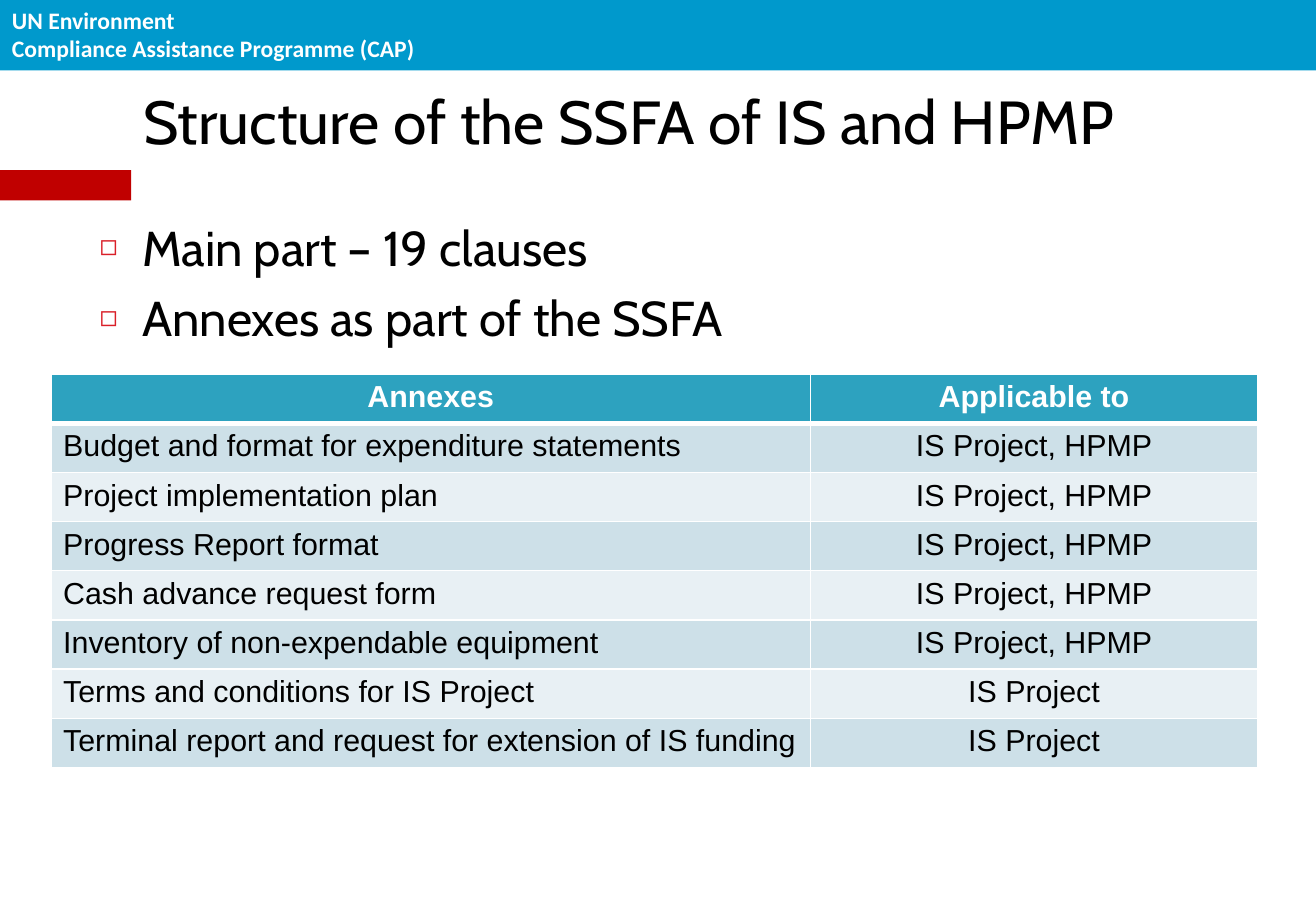
from lxml import etree
from pptx import Presentation
from pptx import util as u
from pptx.dml.color import RGBColor
from pptx.enum import shapes, text
from pptx.oxml import ns

WHITE = RGBColor(0xFF, 0xFF, 0xFF)
BLACK = RGBColor(0x00, 0x00, 0x00)
BLUE = RGBColor(0x00, 0x99, 0xCC)
RED = RGBColor(0xC0, 0x00, 0x00)
BULLET_RED = RGBColor(0xDA, 0x1F, 0x28)
TEAL = RGBColor(0x2D, 0xA2, 0xBF)
BANDS = [RGBColor(0xE8, 0xF0, 0xF4), RGBColor(0xCD, 0xE0, 0xE8)]

BOTH = "IS Project, HPMP"
ROWS = [
    ("Annexes", "Applicable to"),
    ("Budget and format for expenditure statements", BOTH),
    ("Project implementation plan", BOTH),
    ("Progress Report format", BOTH),
    ("Cash advance request form", BOTH),
    ("Inventory of non-expendable equipment", BOTH),
    ("Terms and conditions for IS Project", "IS Project"),
    ("Terminal report and request for extension of IS funding", "IS Project"),
]


def style(para, font, size, color, bold=False):
    for span in para.runs:
        span.font.name = font
        span.font.size = u.Pt(size)
        span.font.color.rgb = color
        span.font.bold = bold


def add_element(parent, tag, **attributes):
    return etree.SubElement(parent, ns.qn(tag), **attributes)


deck = Presentation()
deck.slide_width, deck.slide_height = u.Inches(10.83), u.Inches(7.5)
page = deck.slides.add_slide(deck.slide_layouts[1])

# Header band and red accent
for top, width, height, color in [(1.4, 1.08, 0.25, RED), (0, 10.83, 0.58, BLUE)]:
    bar = page.shapes.add_shape(shapes.MSO_SHAPE.RECTANGLE, 0, u.Inches(top),
                                u.Inches(width), u.Inches(height))
    bar.shadow.inherit = False
    bar.fill.solid()
    bar.fill.fore_color.rgb = color
    bar.line.fill.background()

header = page.shapes.add_textbox(0, 0, u.Inches(3.68), u.Inches(0.57))
header.text_frame.word_wrap = False
header.text_frame.text = "UN Environment\nCompliance Assistance Programme (CAP)"
for para in header.text_frame.paragraphs:
    style(para, "Calibri", 14, WHITE, True)

# Title
title = page.shapes.title
title.left, title.top = u.Inches(1.08), u.Inches(0.58)
title.width, title.height = u.Inches(9.58), u.Inches(0.82)
title.text_frame.text = "Structure of the SSFA of IS and HPMP"
title.text_frame.auto_size = text.MSO_AUTO_SIZE.NONE
title.text_frame.vertical_anchor = text.MSO_ANCHOR.MIDDLE
title.text_frame.paragraphs[0].alignment = text.PP_ALIGN.LEFT
style(title.text_frame.paragraphs[0], "Cabin", 36, BLACK)

# Bullet list
body = page.placeholders[1]
body.left, body.top = u.Inches(0.72), u.Inches(1.74)
body.width, body.height = u.Inches(9.69), u.Inches(1.34)
body.text_frame.text = "Main part – 19 clauses\nAnnexes as part of the SSFA"
body.text_frame.auto_size = text.MSO_AUTO_SIZE.NONE
for index, para in enumerate(body.text_frame.paragraphs):
    properties = para._p.get_or_add_pPr()
    properties.set("marL", str(u.Inches(0.35)))
    properties.set("indent", str(-u.Inches(0.35)))
    add_element(add_element(properties, "a:buClr"), "a:srgbClr", val=str(BULLET_RED))
    add_element(properties, "a:buSzPct", val="60000")
    add_element(properties, "a:buChar", char="◻")
    para.space_before = u.Pt(7 if index else 0)
    style(para, "Cabin", 29, BLACK)

# Table of annexes
frame = page.shapes.add_table(len(ROWS), 2, u.Inches(0.42), u.Inches(3.08),
                              u.Inches(9.93), u.Inches(3.24))
table = frame.table
for column, width in zip(table.columns, (6.25, 3.68)):
    column.width = u.Inches(width)
for row, values in enumerate(ROWS):
    is_head = row == 0
    for column, value in enumerate(values):
        cell = table.cell(row, column)
        cell.text_frame.text = value
        para = cell.text_frame.paragraphs[0]
        if is_head or column == 1:
            para.alignment = text.PP_ALIGN.CENTER
        style(para, "Arial", 18, WHITE if is_head else BLACK, is_head)
        properties = cell._tc.get_or_add_tcPr()
        for side in "LRTB":
            heavy = (is_head and side == "B") or (row == 1 and side == "T")
            border = add_element(properties, f"a:ln{side}", w=str(u.Pt(3 if heavy else 1)))
            add_element(add_element(border, "a:solidFill"), "a:srgbClr", val=str(WHITE))
        cell.fill.solid()
        cell.fill.fore_color.rgb = TEAL if is_head else BANDS[row % 2]

deck.save("out.pptx")
